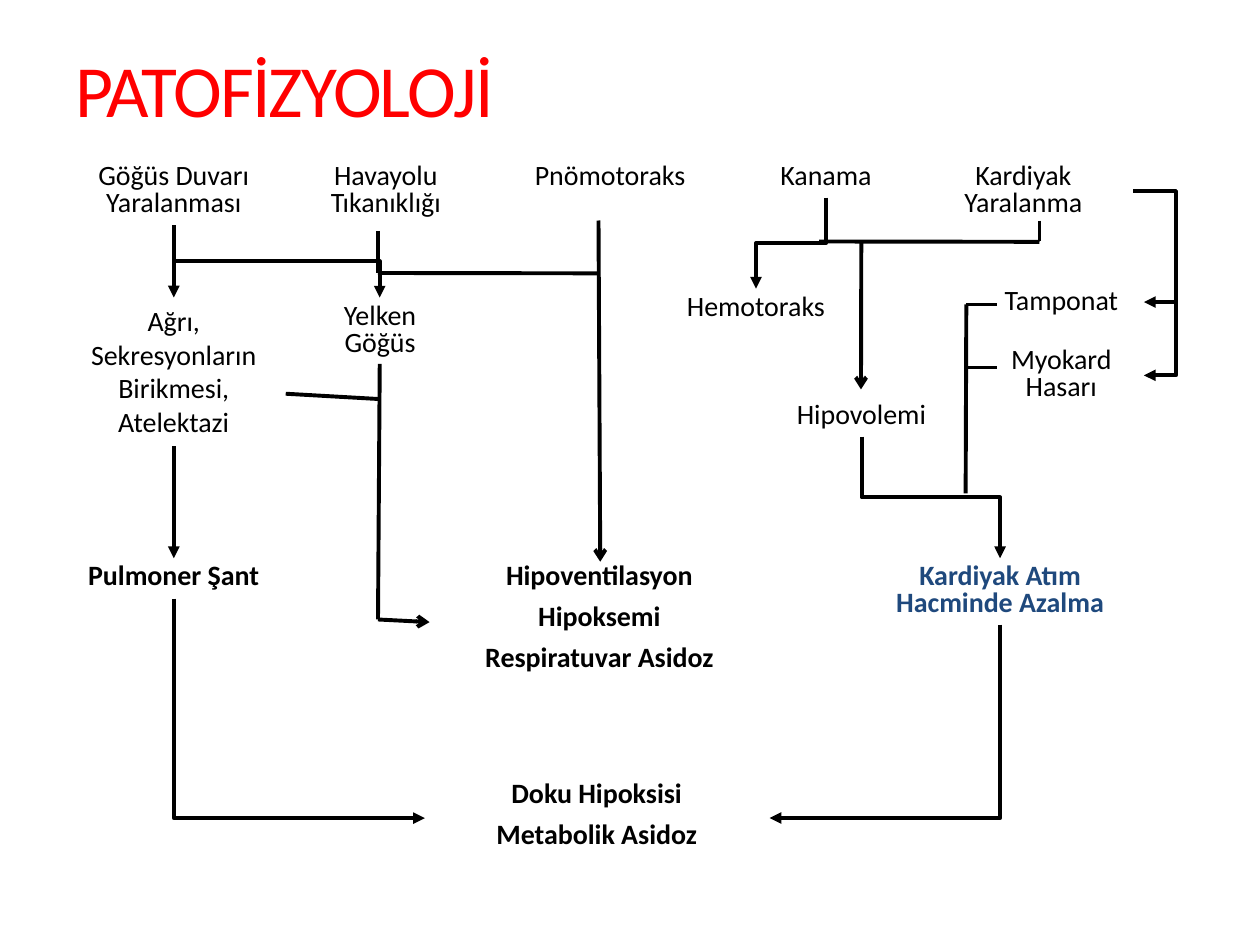
from lxml.etree import SubElement
from pptx import Presentation
from pptx.dml.color import RGBColor
from pptx.enum.shapes import MSO_CONNECTOR as Connector, MSO_SHAPE as Shape
from pptx.enum.text import MSO_ANCHOR as Anchor, MSO_AUTO_SIZE as AutoSize, PP_ALIGN as Align
from pptx.oxml.ns import qn
from pptx.util import Pt

COLOURS = {"black": "000000", "white": "FFFFFF", "red": "FF0000", "blue": "1F497D"}
COLOURS = {name: RGBColor.from_string(value) for name, value in COLOURS.items()}

deck = Presentation()
deck.slide_width, deck.slide_height = Pt(720), Pt(540)
page = deck.slides.add_slide(deck.slide_layouts[6])


def write(para, text, size, colour, bold=False):
    span = para.add_run()
    span.text = text
    span.font.name = "Calibri"
    span.font.size = Pt(size)
    span.font.bold = bold
    span.font.color.rgb = COLOURS[colour]
    return span


def draw_line(kind, x1, y1, x2, y2, head=None):
    """Add a black connector, with an arrowhead at its end if one is named."""
    line = page.shapes.add_connector(kind, Pt(x1), Pt(y1), Pt(x2), Pt(y2))
    line.line.width = Pt(2.25)
    line.line.color.rgb = COLOURS["black"]
    properties = line._element.spPr
    if head:
        SubElement(properties.find(qn("a:ln")), qn("a:tailEnd"), type=head)
    SubElement(properties, qn("a:effectLst"))
    return line


# Boxes: key, left, top, width, height, paragraphs, line spacing, colour, bold
boxes = {}
for key, left, top, width, height, texts, spacing, colour, bold in [
    ("wall", 45.3, 90, 108, 39, ["Göğüs Duvarı Yaralanması"], 0.8, "black", False),
    ("airway", 155.5, 90, 130, 39, ["Havayolu Tıkanıklığı"], 0.8, "black", False),
    ("pneumothorax", 289.2, 90, 119, 23, ["Pnömotoraks"], 0.8, "black", False),
    ("bleeding", 428.5, 90, 87, 23, ["Kanama"], 0.8, "black", False),
    ("cardiac", 522.3, 90, 125, 39, ["Kardiyak Yaralanma"], 0.8, "black", False),
    ("pain", 30.3, 170, 138, 85,
     ["Ağrı, Sekresyonların Birikmesi, Atelektazi"], 1, "black", False),
    ("flail", 174.2, 170, 86, 38, ["Yelken Göğüs"], 0.8, "black", False),
    ("hemothorax", 378, 165, 108, 23, ["Hemotoraks"], 0.8, "black", False),
    ("hypovolemia", 445.3, 227, 94, 23, ["Hipovolemi"], 0.8, "black", False),
    ("tamponade", 559.5, 161.4, 94, 23, ["Tamponat"], 0.8, "black", False),
    ("myocardium", 559.5, 195.3, 94, 38, ["Myokard Hasarı"], 0.8, "black", False),
    ("output", 492, 319, 159, 38, ["Kardiyak Atım Hacminde Azalma"], 0.8, "blue", True),
    ("hypoventilation", 245.3, 319, 194.5, 73.5,
     ["Hipoventilasyon", "Hipoksemi", "Respiratuvar Asidoz"], 0.8, "black", True),
    ("shunt", 34.3, 319, 130, 23, ["Pulmoner Şant"], 0.8, "black", True),
    ("tissue", 242.8, 443.5, 196.5, 48.5,
     ["Doku Hipoksisi", "Metabolik Asidoz"], 0.8, "black", True),
]:
    box = page.shapes.add_shape(Shape.RECTANGLE, Pt(left), Pt(top), Pt(width), Pt(height))
    box.shadow.inherit = False
    box.fill.solid()
    box.fill.fore_color.rgb = COLOURS["white"]
    box.line.fill.background()
    frame = box.text_frame
    frame.word_wrap = True
    frame.auto_size = AutoSize.SHAPE_TO_FIT_TEXT
    frame.vertical_anchor = Anchor.TOP
    for index, text in enumerate(texts):
        para = frame.add_paragraph() if index else frame.paragraphs[0]
        para.alignment = Align.CENTER
        para.line_spacing = spacing
        para.space_before = Pt(8 if index else 0)
        write(para, text, 16, colour, bold)
    boxes[key] = box

# Straight arrows between boxes
for upper, lower, top, bottom in [("wall", "pain", 129, 170), ("pain", "shunt", 255, 319)]:
    arrow = draw_line(Connector.STRAIGHT, 99.3, top, 99.3, bottom, "triangle")
    arrow.begin_connect(boxes[upper], 2)
    arrow.end_connect(boxes[lower], 0)

# Elbows that leave downwards: turned a quarter, mirrored when they run to the right
for preset, x1, y1, x2, y2 in [
    ("bentConnector2", 99.3, 342, 242.8, 467.5),
    ("bentConnector2", 571.5, 357, 439.8, 467.5),
    ("bentConnector3", 472, 113, 432, 165),
    ("bentConnector3", 492.4, 249.6, 571.5, 319),
    ("bentConnector3", 99.3, 128.6, 217, 170),
]:
    middle_x, middle_y = (x1 + x2) / 2, (y1 + y2) / 2
    half_width, half_height = abs(y2 - y1) / 2, abs(x2 - x1) / 2
    elbow = draw_line(Connector.ELBOW, middle_x - half_width, middle_y - half_height,
                      middle_x + half_width, middle_y + half_height, "triangle")
    properties = elbow._element.spPr
    properties.find(qn("a:prstGeom")).set("prst", preset)
    frame = properties.find(qn("a:xfrm"))
    frame.set("rot", str((270 if x2 > x1 else 90) * 60000))
    if x2 > x1:
        frame.set("flipH", "1")

# Elbows that swing out to the right of the cardiac injury and come back
for end_y in (172.6, 214.5):
    elbow = draw_line(Connector.ELBOW, 647.6, 109.2, 653.7, end_y, "triangle")
    adjustments = elbow._element.spPr.find(qn("a:prstGeom")).find(qn("a:avLst"))
    SubElement(adjustments, qn("a:gd"), name="adj1", fmla="val 400000")

# Free lines and open arrows
for x1, y1, x2, y2, head in [
    (342, 126, 343, 321, "arrow"),
    (216, 156, 342, 156.2, None),
    (216, 132, 216, 156, None),
    (217, 208, 216, 354, None),
    (216, 354, 245.5, 355.5, "arrow"),
    (163.3, 225, 216, 228, None),
    (468, 138, 594, 138.2, None),
    (492.2, 138, 492, 222.5, "arrow"),
    (594, 126, 594, 138, None),
    (552.2, 174, 551.8, 282, None),
    (552, 210, 570, 210, None),
    (552, 174, 570, 174, None),
]:
    draw_line(Connector.STRAIGHT, x1, y1, x2, y2, head)

title = page.shapes.add_textbox(Pt(36), Pt(21.5), Pt(588), Pt(90))
title.text_frame.word_wrap = True
span = write(title.text_frame.paragraphs[0], "PATOFİZYOLOJİ", 42, "red")
span.font._element.set("spc", "-100")

deck.save("out.pptx")
